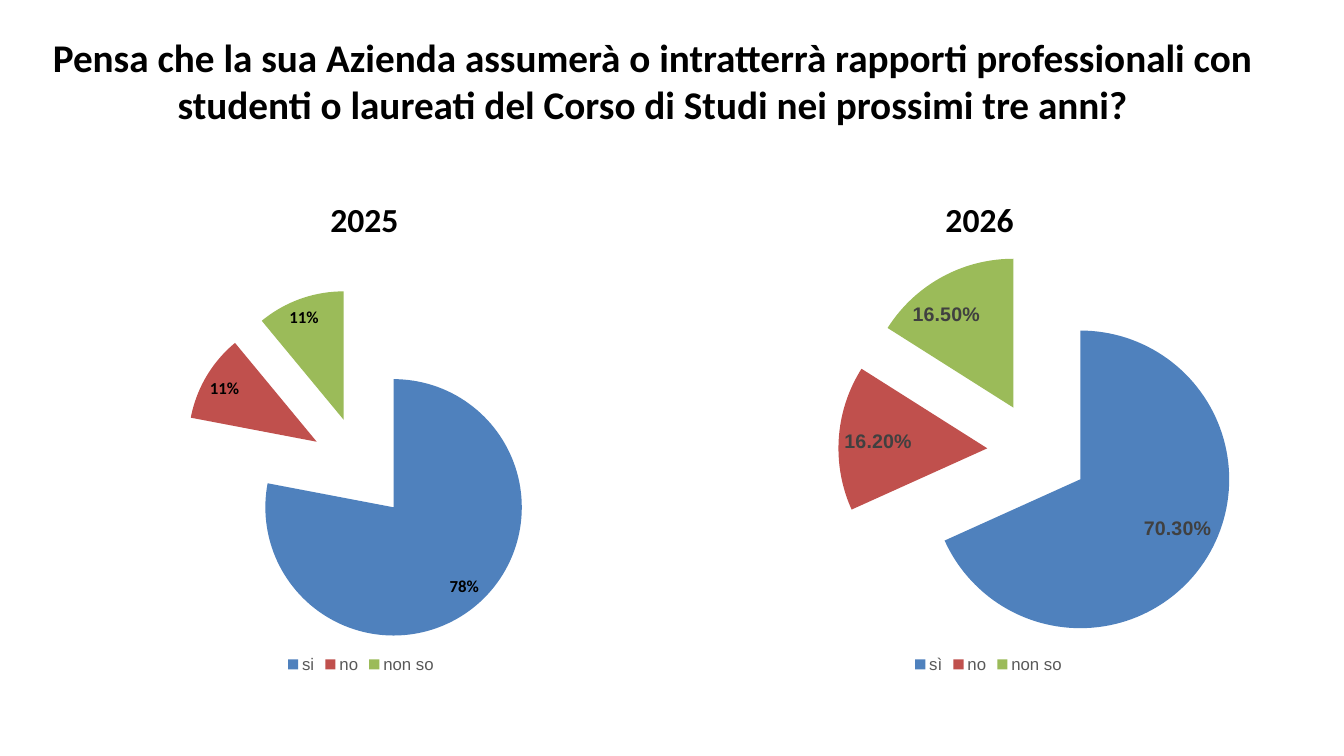
from lxml.etree import SubElement
from pptx import Presentation
from pptx.chart.data import CategoryChartData
from pptx.dml.color import RGBColor
from pptx.enum.chart import XL_CHART_TYPE, XL_LABEL_POSITION, XL_LEGEND_POSITION
from pptx.enum.text import MSO_ANCHOR, MSO_AUTO_SIZE, PP_ALIGN
from pptx.oxml import parse_xml
from pptx.oxml.ns import nsdecls, qn
from pptx.util import Inches, Pt

# Content
TITLE = ("Pensa che la sua Azienda assumerà o intratterrà rapporti professionali "
         "con studenti o laureati del Corso di Studi nei prossimi tre anni?")
COLORS = {"text": "000000", "legend": "595959", "soft": "404040",
          "yes": "4F81BD", "no": "C0504D", "unsure": "9BBB59"}
SLICES = ("yes", "no", "unsure")
SURVEYS = [
    {"year": "2025", "answers": ("si", "no", "non so"), "values": (78, 11, 11),
     "frame": (0.67, 2.48, 5.82, 4.24), "plot": (0.04, 0.09, 0.92, 0.84),
     "explosion": 40, "percent": True, "format": "0%",
     "label": ("Calibri", 12, "text")},
    {"year": "2026", "answers": ("sì", "no", "non so"), "values": (0.703, 0.162, 0.165),
     "frame": (6.75, 1.58, 6.11, 5.14), "plot": (0.16, 0.18, 0.84, 0.77),
     "explosion": 34, "percent": False, "format": "0.00%",
     "label": ("Arial", 14, "soft")},
]

# Grid: two heading columns
WIDTH, HEIGHT = 13.33, 7.5
MARGIN, COLUMN, GAP = 0.67, 5.89, 0.21
HEADING_TOP, HEADING_HEIGHT = 1.97, 0.4
TITLE_FRAME = (0.48, 0.33, 11.98, 3.03)


def inches(frame):
    return [Inches(length) for length in frame]


def style_font(font, name, size, color, bold=False):
    font.name, font.size, font.bold = name, Pt(size), bold
    font.color.rgb = RGBColor.from_string(COLORS[color])


def write(box, text, size, anchor):
    frame = box.text_frame
    frame.text = text
    frame.word_wrap = True
    frame.auto_size = MSO_AUTO_SIZE.NONE
    frame.vertical_anchor = anchor
    frame.margin_left = frame.margin_right = frame.margin_top = frame.margin_bottom = 0
    para = frame.paragraphs[0]
    para.alignment = PP_ALIGN.CENTER
    style_font(para.runs[0].font, "Calibri", size, "text", True)


def place_plot(chart, plot_share):
    """Fix the inner plot area as shares of the chart frame."""
    area = chart._chartSpace.chart.plotArea
    for old in area.findall(qn("c:layout")):
        area.remove(old)
    layout = parse_xml(f"<c:layout {nsdecls('c')}/>")
    manual = SubElement(layout, qn("c:manualLayout"))
    settings = [("layoutTarget", "inner"), ("xMode", "edge"), ("yMode", "edge"),
                *zip("xywh", plot_share)]
    for tag, value in settings:
        SubElement(manual, qn(f"c:{tag}")).set("val", str(value))
    area.insert(0, layout)


def add_pie(slide, survey):
    data = CategoryChartData(number_format=survey["format"])
    data.categories = survey["answers"]
    data.add_series("Series 1", survey["values"])
    chart = slide.shapes.add_chart(XL_CHART_TYPE.PIE, *inches(survey["frame"]), data).chart
    chart.has_title = False
    style_font(chart.font, "Arial", 10, "text")
    place_plot(chart, survey["plot"])

    # Legend
    chart.has_legend = True
    chart.legend.position = XL_LEGEND_POSITION.BOTTOM
    chart.legend.include_in_layout = False
    style_font(chart.legend.font, "Arial", 12, "legend")

    # Exploded slices
    plot = chart.plots[0]
    plot.vary_by_categories = True
    series = plot.series[0]
    explosion = parse_xml(f'<c:explosion {nsdecls("c")} val="{survey["explosion"]}"/>')
    series._element.find(qn("c:tx")).addnext(explosion)
    for index, name in enumerate(SLICES):
        fill = series.points[index].format.fill
        fill.solid()
        fill.fore_color.rgb = RGBColor.from_string(COLORS[name])

    # Labels
    labels = series.data_labels
    labels.show_percentage = survey["percent"]
    labels.show_value = not survey["percent"]
    labels.number_format = survey["format"]
    labels.number_format_is_linked = False
    labels.position = XL_LABEL_POSITION.BEST_FIT
    style_font(labels.font, *survey["label"], True)


def main():
    deck = Presentation()
    deck.slide_width, deck.slide_height = Inches(WIDTH), Inches(HEIGHT)
    slide = deck.slides.add_slide(deck.slide_layouts[5])

    # Title
    title = slide.shapes.title
    title.left, title.top, title.width, title.height = inches(TITLE_FRAME)
    write(title, TITLE, 28, MSO_ANCHOR.TOP)

    # Year headings, then charts
    for column, survey in enumerate(SURVEYS):
        left = MARGIN + column * (COLUMN + GAP)
        heading = slide.shapes.add_textbox(
            *inches((left, HEADING_TOP, COLUMN, HEADING_HEIGHT)))
        write(heading, survey["year"], 24, MSO_ANCHOR.BOTTOM)
    for survey in SURVEYS:
        add_pie(slide, survey)

    deck.save("out.pptx")


if __name__ == "__main__":
    main()
